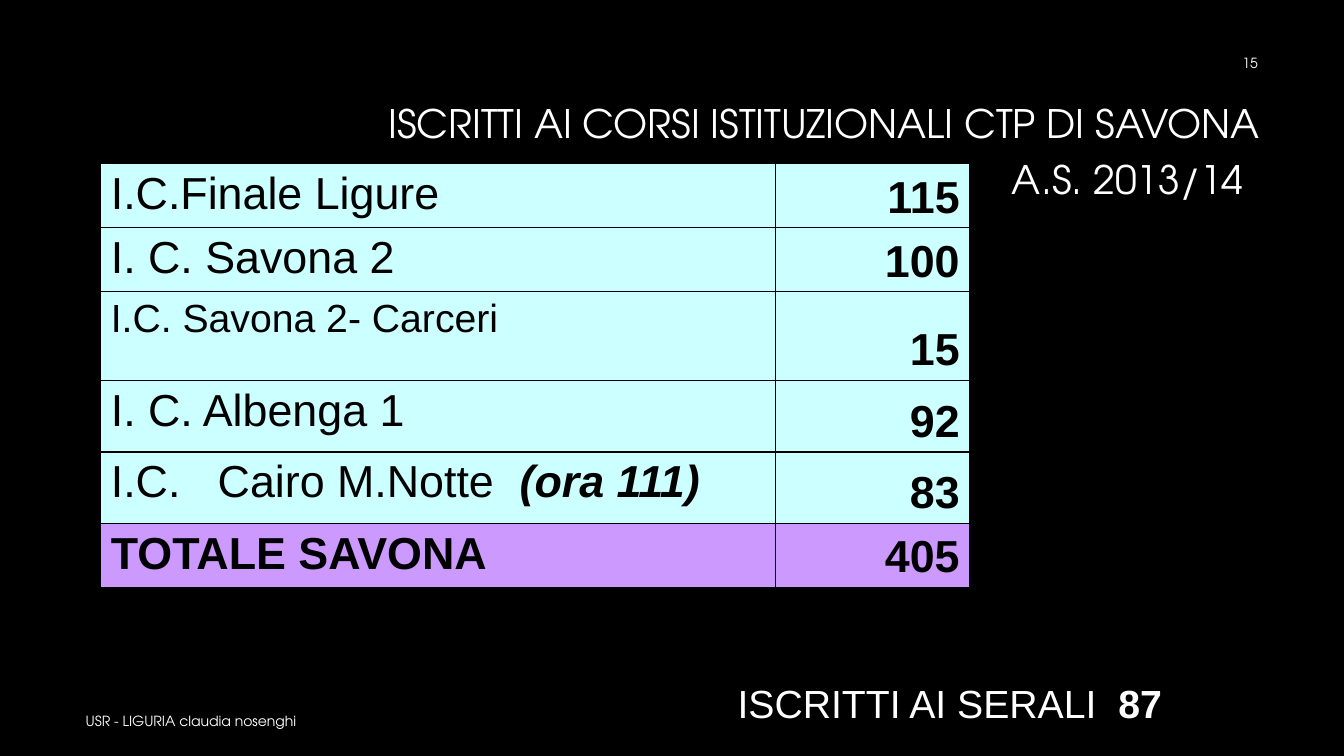
import pptx
import pptx.dml.color
import pptx.enum.text
import pptx.oxml
import pptx.oxml.ns
import pptx.util
from pptx.util import Cm

Align = pptx.enum.text.PP_ALIGN
Anchor = pptx.enum.text.MSO_ANCHOR

DISPLAY, BODY = "TeX Gyre Adventor", "Arial"
WHITE, BLACK, AQUA, LILAC = "FFFFFF", "000000", "CCFFFF", "CC99FF"

# Each run is (text, format values that differ from the base)
LABELS = [
    # left, top, width, height (cm), paragraph, anchor, wrap, base format, runs
    (1.91, 17.65, 21.59, 1.02, {"alignment": Align.LEFT}, Anchor.MIDDLE, True,
     {"name": DISPLAY, "size": 10}, [("USR - LIGURIA claudia nosenghi", {})]),
    (24.33, 1.07, 7.62, 1.02, {"alignment": Align.RIGHT}, Anchor.MIDDLE, True,
     {"name": DISPLAY, "size": 10}, [("15", {})]),
    (8.05, 2.13, 23.93, 3.58, {"alignment": Align.RIGHT, "line_spacing": 0.9},
     Anchor.MIDDLE, True, {"name": DISPLAY, "size": 28},
     [("ISCRITTI AI CORSI ISTITUZIONALI CTP DI SAVONA A.S. 2013/14", {}),
      (" ", {"size": 40})]),
    (18.34, 16.99, 11.25, 1.45, {"alignment": Align.LEFT}, Anchor.TOP, False,
     {"name": BODY, "size": 28},
     [("ISCRITTI AI SERALI  ", {}), ("87", {"bold": True})]),
]

ENROLMENTS = [
    # row height (cm), fill, school runs, enrolled
    (1.61, AQUA, [("I.C.Finale Ligure", {})], "115"),
    (1.61, AQUA, [("I. C. Savona 2", {})], "100"),
    (2.24, AQUA, [("I.C. Savona 2- Carceri", {"size": 28})], "15"),
    (1.8, AQUA, [("I. C. Albenga 1", {})], "92"),
    (1.8, AQUA, [("I.C.   Cairo M.Notte  ", {}),
                 ("(ora 111)", {"bold": True, "italic": True})], "83"),
    (1.61, LILAC, [("TOTALE SAVONA", {"bold": True})], "405"),
]
TABLE_LEFT, TABLE_TOP = 2.54, 4.13
COLUMN_WIDTHS = [17.0, 4.9]


def rgb(code):
    return pptx.dml.color.RGBColor.from_string(code)


def write(paragraph, layout, runs, base, colour):
    for key, value in layout.items():
        setattr(paragraph, key, value)
    for text, changes in runs:
        run = paragraph.add_run()
        run.text = text
        for key, value in (base | changes).items():
            setattr(run.font, key, pptx.util.Pt(value) if key == "size" else value)
        run.font.color.rgb = rgb(colour)


def add_borders(cell):
    """Put a thin black line on all four sides, ahead of the cell's fill."""
    properties = cell._tc.get_or_add_tcPr()
    for position, side in enumerate(("lnL", "lnR", "lnT", "lnB")):
        properties.insert(position, pptx.oxml.parse_xml(
            f'<a:{side} {pptx.oxml.ns.nsdecls("a")} w="12700"><a:solidFill>'
            f'<a:srgbClr val="{BLACK}"/></a:solidFill></a:{side}>'))


def add_label(slide, left, top, width, height, layout, anchor, wrap, base, runs):
    frame = slide.shapes.add_textbox(
        Cm(left), Cm(top), Cm(width), Cm(height)).text_frame
    frame.word_wrap = wrap
    frame.vertical_anchor = anchor
    write(frame.paragraphs[0], layout, runs, base, WHITE)


def add_enrolments(slide):
    heights = [row[0] for row in ENROLMENTS]
    table = slide.shapes.add_table(
        len(ENROLMENTS), len(COLUMN_WIDTHS), Cm(TABLE_LEFT), Cm(TABLE_TOP),
        Cm(sum(COLUMN_WIDTHS)), Cm(sum(heights))).table
    table.first_row = table.horz_banding = False
    for column, width in zip(table.columns, COLUMN_WIDTHS):
        column.width = Cm(width)
    for index, (height, fill, school, enrolled) in enumerate(ENROLMENTS):
        table.rows[index].height = Cm(height)
        contents = [(school, Align.LEFT, Anchor.TOP),
                    ([(enrolled, {"bold": True})], Align.RIGHT, Anchor.BOTTOM)]
        for column, (runs, alignment, anchor) in enumerate(contents):
            cell = table.cell(index, column)
            cell.fill.solid()
            cell.fill.fore_color.rgb = rgb(fill)
            cell.vertical_anchor = anchor
            add_borders(cell)
            write(cell.text_frame.paragraphs[0], {"alignment": alignment}, runs,
                  {"name": BODY, "size": 32, "bold": False}, BLACK)


def main():
    deck = pptx.Presentation()
    deck.slide_width, deck.slide_height = Cm(33.87), Cm(19.05)
    slide = deck.slides.add_slide(deck.slide_layouts[6])
    slide.background.fill.solid()
    slide.background.fill.fore_color.rgb = rgb(BLACK)
    for label in LABELS:
        add_label(slide, *label)
    add_enrolments(slide)
    deck.save("out.pptx")


if __name__ == "__main__":
    main()
